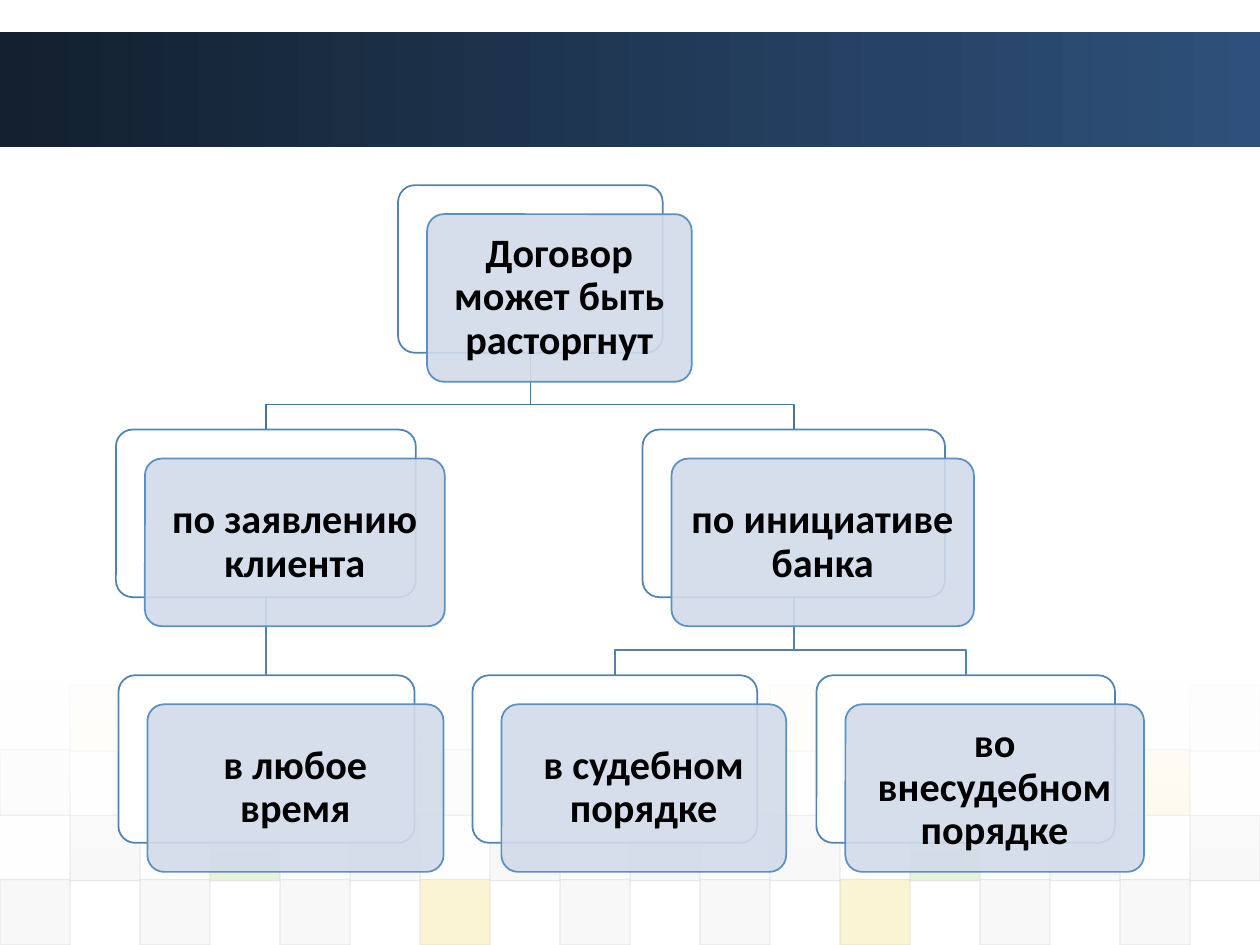
from lxml import etree
from pptx import Presentation
from pptx.dml.color import RGBColor
from pptx.enum.shapes import MSO_CONNECTOR, MSO_SHAPE
from pptx.enum.text import MSO_ANCHOR, PP_ALIGN
from pptx.oxml.ns import qn
from pptx.util import Inches, Pt

COLORS = {
    "band_dark": "12202F", "band_light": "2E507A", "white": "FFFFFF",
    "gray": "DDDDDD", "pale": "EAEAEA", "yellow": "EFC821", "green": "8AC246",
    "card": "D2DBE9", "card_edge": "5A90C2", "back_edge": "5283B0",
    "root_link": "48739B", "link": "5283B0", "text": "000000",
}


def add_box(kind, left, top, width, height, fill=None, line=None, weight=1):
    box = slide.shapes.add_shape(
        kind, Inches(left), Inches(top), Inches(width), Inches(height))
    box.shadow.inherit = False
    if fill:
        box.fill.solid()
        box.fill.fore_color.rgb = RGBColor.from_string(COLORS[fill])
    if line:
        box.line.color.rgb = RGBColor.from_string(COLORS[line])
        box.line.width = Pt(weight)
    else:
        box.line.fill.background()
    return box


def set_opacity(shape, *percents):
    """Apply percentages to the shape's colours in order: fill, then line."""
    for color, percent in zip(shape._element.spPr.iter(qn("a:srgbClr")), percents):
        etree.SubElement(color, qn("a:alpha")).set("val", str(percent * 1000))


prs = Presentation()
prs.slide_width, prs.slide_height = Inches(10), Inches(7.5)
slide = prs.slides.add_slide(prs.slide_layouts[6])

# Header band
band = add_box(MSO_SHAPE.RECTANGLE, 0, 0.25, 10, 0.92)
band.fill.gradient()
band.fill.gradient_angle = 0
for stop, name in zip(band.fill.gradient_stops, ("band_dark", "band_light")):
    stop.color.rgb = RGBColor.from_string(COLORS[name])

# Checkered footer: top, opacity, default colour, columns, coloured exceptions
TILE = 10 / 18
tile_rows = [
    (5.44, 5, "pale", (1, 5, 11, 15, 17), {1: "yellow", 11: "yellow", 15: "green"}),
    (5.95, 10, "gray", (0, 6, 10, 16), {16: "yellow"}),
    (6.47, 20, "gray", range(1, 18, 2), {3: "green", 13: "green"}),
    (6.98, 20, "gray", range(0, 17, 2), {6: "yellow", 12: "yellow"}),
]
for top, opacity, base, columns, accents in tile_rows:
    for column in columns:
        tile = add_box(MSO_SHAPE.RECTANGLE, column * TILE, top, TILE, 0.52,
                       accents.get(column, base), "gray", 0.75)
        set_opacity(tile, opacity, 60)

veil = add_box(MSO_SHAPE.RECTANGLE, 0, 5.37, 10, 1.62)
veil.fill.gradient()
veil.fill.gradient_angle = 270
for stop in veil.fill.gradient_stops:
    stop.color.rgb = RGBColor.from_string(COLORS["white"])
set_opacity(veil, 90, 0)

# Hierarchy: left, top, width, text
CARD_HEIGHT = 1.33
OFFSET = 0.23
cards = {
    "contract": (3.16, 1.47, 2.1, "Договор может быть расторгнут"),
    "client": (0.92, 3.41, 2.38, "по заявлению клиента"),
    "anytime": (0.94, 5.36, 2.35, "в любое время"),
    "bank": (5.1, 3.41, 2.4, "по инициативе банка"),
    "court": (3.75, 5.36, 2.26, "в судебном порядке"),
    "no_court": (6.48, 5.36, 2.37, "во внесудебном порядке"),
}
children = {
    "bank": ("no_court", "court"),
    "client": ("anytime",),
    "contract": ("bank", "client"),
}

for parent, branch in children.items():
    left, top, width, _ = cards[parent]
    start_x, start_y = Inches(left + width / 2), Inches(top + CARD_HEIGHT)
    for child in branch:
        left, top, width, _ = cards[child]
        end_x, end_y = Inches(left + width / 2), Inches(top)
        if len(branch) == 1:
            link = slide.shapes.add_connector(
                MSO_CONNECTOR.STRAIGHT, start_x, start_y, start_x, end_y)
            etree.SubElement(link._element.spPr, qn("a:effectLst"))
        else:
            bend_y = end_y - Inches(0.2)
            builder = slide.shapes.build_freeform(start_x, start_y)
            builder.add_line_segments(
                [(start_x, bend_y), (end_x, bend_y), (end_x, end_y)], close=False)
            link = builder.convert_to_shape()
            link.fill.background()
            link.shadow.inherit = False
        link.line.color.rgb = RGBColor.from_string(
            COLORS["root_link" if parent == "contract" else "link"])
        link.line.width = Pt(1)

for left, top, width, label in cards.values():
    back = add_box(MSO_SHAPE.ROUNDED_RECTANGLE, left, top, width, CARD_HEIGHT,
                   "white", "back_edge")
    card = add_box(MSO_SHAPE.ROUNDED_RECTANGLE, left + OFFSET, top + OFFSET,
                   width, CARD_HEIGHT, "card", "card_edge")
    back.adjustments[0] = card.adjustments[0] = 0.1
    set_opacity(card, 90)

    frame = card.text_frame
    frame.word_wrap = True
    frame.vertical_anchor = MSO_ANCHOR.MIDDLE
    frame.margin_left = frame.margin_right = Inches(0.1)
    frame.margin_top = frame.margin_bottom = Inches(0.1)
    paragraph = frame.paragraphs[0]
    paragraph.alignment = PP_ALIGN.CENTER
    paragraph.line_spacing = 0.9
    run = paragraph.add_run()
    run.text = label
    run.font.name = "Calibri"
    run.font.size = Pt(23)
    run.font.bold = True
    run.font.color.rgb = RGBColor.from_string(COLORS["text"])

prs.save("out.pptx")
